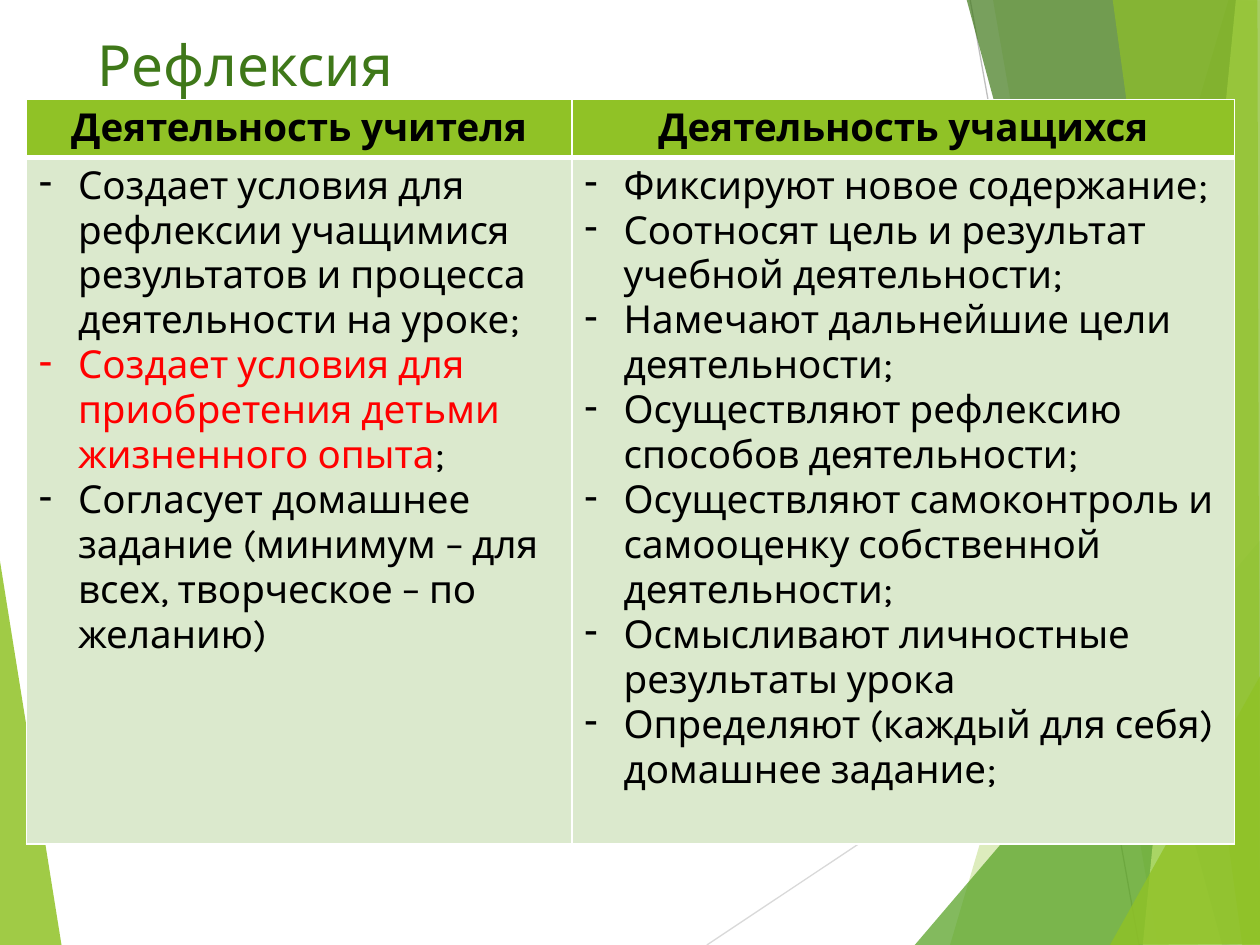
import pptx
import pptx.util
import pptx.dml.color
import pptx.enum.shapes
import pptx.enum.text
import pptx.oxml
import pptx.oxml.ns
from lxml import etree
from pptx.util import Inches

RGBColor = pptx.dml.color.RGBColor
WHITE = RGBColor(0xFF, 0xFF, 0xFF)
BLACK = RGBColor(0, 0, 0)
RED = RGBColor(0xFF, 0, 0)
LIME = RGBColor(0x90, 0xC2, 0x26)
GREEN = RGBColor(0x54, 0xA0, 0x21)
DARK_GREEN = RGBColor(0x3F, 0x78, 0x19)
PALE_LIME = RGBColor(0xC0, 0xE4, 0x74)
PALE_GREEN = RGBColor(0xDB, 0xE9, 0xCD)
GREY = RGBColor(0xBF, 0xBF, 0xBF)
LIGHT_GREY = RGBColor(0xD9, 0xD9, 0xD9)
FONT = "Karla"
qn = pptx.oxml.ns.qn


def add_run(p, text, size, color, bold=False):
    r = p.add_run()
    r.text = text
    r.font.name = FONT
    r.font.size = pptx.util.Pt(size)
    r.font.bold = bold
    r.font.color.rgb = color


def set_borders(cell, widths):
    """Draw white borders; widths are points for left, right, top, bottom."""
    tc_pr = cell._tc.get_or_add_tcPr()
    for i, (side, width) in enumerate(zip("LRTB", widths)):
        ln = etree.Element(qn(f"a:ln{side}"), w=str(pptx.util.Pt(width)))
        fill = etree.SubElement(ln, qn("a:solidFill"))
        etree.SubElement(fill, qn("a:srgbClr"), val=str(WHITE))
        tc_pr.insert(i, ln)


prs = pptx.Presentation()
prs.slide_width, prs.slide_height = Inches(10), Inches(7.5)
s = prs.slides.add_slide(prs.slide_layouts[5])

# Background: two thin lines, then translucent facets
for x1, y1, x2, y2, color in [
    (5.61, 7.5, 10.01, 4.57, LIGHT_GREY),
    (7.7, 0, 9.04, 7.5, GREY),
]:
    line = s.shapes.add_connector(
        pptx.enum.shapes.MSO_CONNECTOR.STRAIGHT,
        Inches(x1), Inches(y1), Inches(x2), Inches(y2))
    line.line.color.rgb = color
    line.line.width = pptx.util.Pt(0.75)
    etree.SubElement(line._element.spPr, qn("a:effectLst"))

facets = [
    (LIME, 85, [(-0.01, 4.39), (0.49, 7.51), (-0.01, 7.5)]),
    (LIME, 30, [(9.75, 0), (7.54, 7.5), (10.02, 7.51), (10.01, 0.01)]),
    (LIME, 20, [(7.88, -0.01), (9.19, 7.5), (10.01, 7.5), (10.01, -0.01)]),
    (GREEN, 72, [(7.26, 7.5), (10, 4.29), (10.01, 7.5)]),
    (DARK_GREEN, 70, [(7.67, -0.01), (9.7, 7.5), (10.01, 7.49), (10.01, -0.01)]),
    (PALE_LIME, 70, [(9.81, -0.01), (9.07, 7.5), (10.01, 7.5), (10, -0.01)]),
    (LIME, 65, [(8.83, -0.01), (9.86, 7.5), (10, 7.5), (9.98, -0.01)]),
    (LIME, 80, [(8.81, 7.5), (10.01, 5.35), (10.01, 7.49)]),
]
for color, opacity, points in facets:
    start, *rest = [(Inches(x), Inches(y)) for x, y in points]
    builder = s.shapes.build_freeform(*start)
    builder.add_line_segments(rest, close=True)
    sp = builder.convert_to_shape()
    sp.shadow.inherit = False
    sp.line.fill.background()
    sp.fill.solid()
    sp.fill.fore_color.rgb = color
    clr = sp._element.spPr.find(qn("a:solidFill")).find(qn("a:srgbClr"))
    etree.SubElement(clr, qn("a:alpha"), val=str(opacity * 1000))

title = s.shapes.title
title.left, title.top = Inches(0.67), Inches(0.19)
title.width, title.height = Inches(6.94), Inches(0.6)
tf = title.text_frame
tf.word_wrap = True
tf.auto_size = pptx.enum.text.MSO_AUTO_SIZE.NONE
tf.vertical_anchor = pptx.enum.text.MSO_ANCHOR.TOP
tf.paragraphs[0].alignment = pptx.enum.text.PP_ALIGN.LEFT
add_run(tf.paragraphs[0], "Рефлексия", 32.4, DARK_GREEN)

# Each column: heading, then items made of (text, colour) runs
columns = [
    (4.33, "Деятельность учителя", [
        [("Создает условия для рефлексии учащимися результатов и процесса "
          "деятельности на уроке;", BLACK)],
        [("Создает условия для приобретения детьми жизненного опыта", RED),
         (";", BLACK)],
        [("Согласует домашнее задание (минимум – для всех, творческое – "
          "по желанию)", BLACK)],
    ]),
    (5.26, "Деятельность учащихся", [
        [(text, BLACK)] for text in (
            "Фиксируют новое содержание;",
            "Соотносят цель и результат учебной деятельности;",
            "Намечают дальнейшие цели деятельности;",
            "Осуществляют рефлексию способов деятельности;",
            "Осуществляют самоконтроль и самооценку собственной деятельности;",
            "Осмысливают личностные результаты урока",
            "Определяют (каждый для себя) домашнее задание;",
        )
    ]),
]
table = s.shapes.add_table(2, 2, Inches(0.21), Inches(0.79),
                           Inches(9.59), Inches(5.91)).table
table.rows[0].height = Inches(0.46)
table.rows[1].height = Inches(5.45)

for col, (width, heading, items) in enumerate(columns):
    table.columns[col].width = Inches(width)
    head, body = table.cell(0, col), table.cell(1, col)
    for cell, color, widths in [(head, LIME, (1, 1, 1, 3)),
                                (body, PALE_GREEN, (1, 1, 3, 1))]:
        cell.fill.solid()
        cell.fill.fore_color.rgb = color
        set_borders(cell, widths)

    p = head.text_frame.paragraphs[0]
    p.alignment = pptx.enum.text.PP_ALIGN.CENTER
    add_run(p, heading, 22, BLACK, bold=True)

    tf = body.text_frame
    for i, runs in enumerate(items):
        p = tf.add_paragraph() if i else tf.paragraphs[0]
        p_pr = p._p.get_or_add_pPr()
        p_pr.set("marL", str(Inches(0.31)))
        p_pr.set("indent", str(-Inches(0.31)))
        etree.SubElement(p_pr, qn("a:buChar"), char="-")
        for text, color in runs:
            add_run(p, text, 22, color)

prs.save("out.pptx")
